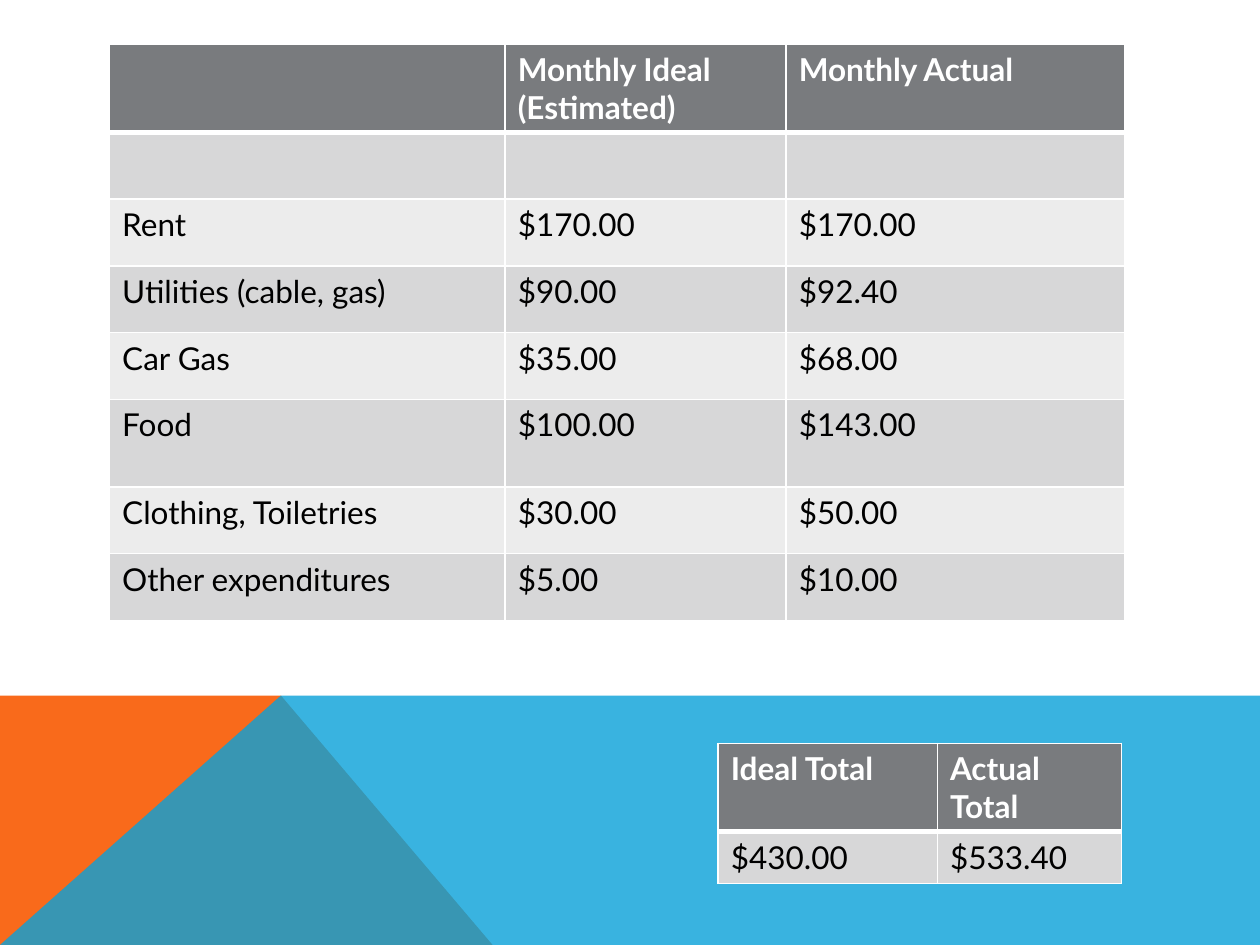
from lxml import etree
from pptx import Presentation
from pptx.dml.color import RGBColor
from pptx.oxml.ns import qn
from pptx.util import Inches, Pt

GRID_COLUMNS, GRID_ROWS = 100, 75
WHITE, BLACK = "FFFFFF", "000000"
HEADER_GRAY, BANDS = "797B7E", ("D7D7D8", "ECECEC")
ORANGE, BLUE = "F96A1B", "08A1D9"

BUDGET = [
    ("", "Monthly Ideal (Estimated)", "Monthly Actual"),
    ("", "", ""),
    ("Rent", "$170.00", "$170.00"),
    ("Utilities (cable, gas)", "$90.00", "$92.40"),
    ("Car Gas", "$35.00", "$68.00"),
    ("Food", "$100.00", "$143.00"),
    ("Clothing, Toiletries", "$30.00", "$50.00"),
    ("Other expenditures", "$5.00", "$10.00"),
]
TOTALS = [("Ideal Total", "Actual Total"), ("$430.00", "$533.40")]


def color(value):
    return RGBColor.from_string(value)


def write(frame, text, font="Lato", size=18, ink=BLACK, bold=False):
    para = frame.paragraphs[0]
    para.font.size = Pt(size)
    if text:
        span = para.add_run()
        span.text = text
        span.font.name, span.font.size = font, Pt(size)
        span.font.bold, span.font.color.rgb = bold, color(ink)


def set_borders(cell, ink, **widths):
    """Draw cell edges; widths maps L, R, T, B, in that order, to points."""
    properties = cell._tc.get_or_add_tcPr()
    for position, (side, width) in enumerate(widths.items()):
        line = etree.Element(qn(f"a:ln{side}"), w=str(Pt(width)))
        fill = etree.SubElement(line, qn("a:solidFill"))
        etree.SubElement(fill, qn("a:srgbClr"), val=ink)
        properties.insert(position, line)


class Page:
    """Style and current slide; lengths are grid columns and rows."""

    def __init__(self, deck):
        self.slide = deck.slides.add_slide(deck.slide_layouts[6])
        self.column = deck.slide_width / GRID_COLUMNS
        self.row = deck.slide_height / GRID_ROWS

    def x(self, columns):
        return round(columns * self.column)

    def y(self, rows):
        return round(rows * self.row)

    def polygon(self, points, fill, opacity=100):
        corners = [(self.x(column), self.y(row)) for column, row in points]
        builder = self.slide.shapes.build_freeform(*corners[0])
        builder.add_line_segments(corners[1:], close=True)
        shape = builder.convert_to_shape()
        shape.shadow.inherit = False
        shape.line.fill.background()
        shape.fill.solid()
        shape.fill.fore_color.rgb = color(fill)
        if opacity < 100:
            tint = shape._element.spPr.find(f"{qn('a:solidFill')}/{qn('a:srgbClr')}")
            etree.SubElement(tint, qn("a:alpha"), val=str(opacity * 1000))

    def table(self, left, top, widths, heights, content):
        frame = self.slide.shapes.add_table(
            len(heights), len(widths), self.x(left), self.y(top),
            self.x(sum(widths)), self.y(sum(heights)))
        table = frame.table
        for column, width in zip(table.columns, widths):
            column.width = self.x(width)
        for index, (row, height, texts) in enumerate(zip(table.rows, heights, content)):
            row.height = self.y(height)
            header = index == 0
            for cell, text in zip(row.cells, texts):
                write(cell.text_frame, text, bold=header, ink=WHITE if header else BLACK)
                cell.fill.solid()
                cell.fill.fore_color.rgb = color(
                    HEADER_GRAY if header else BANDS[(index - 1) % 2])
                set_borders(cell, WHITE, L=1, R=1,
                            T=3 if index == 1 else 1, B=3 if header else 1)


def main():
    deck = Presentation()
    deck.slide_width, deck.slide_height = Inches(10), Inches(7.5)
    page = Page(deck)

    band_top, peak = 55.2, 22.3
    page.polygon([(0, GRID_ROWS), (0, band_top), (peak, band_top), (39.1, GRID_ROWS)], ORANGE)
    page.polygon([(0, GRID_ROWS), (peak, band_top), (GRID_COLUMNS, band_top),
                  (GRID_COLUMNS, GRID_ROWS)], BLUE, opacity=80)

    tall, normal, short = 6.95, 5.3, 4.1
    page.table(8.7, 3.5, [31.4, 22.3, 26.9],
               [tall] + [normal] * 4 + [tall] + [normal] * 2, BUDGET)
    page.table(57, 59, [17.4, 14.6], [tall, short], TOTALS)
    deck.save("out.pptx")


if __name__ == "__main__":
    main()
